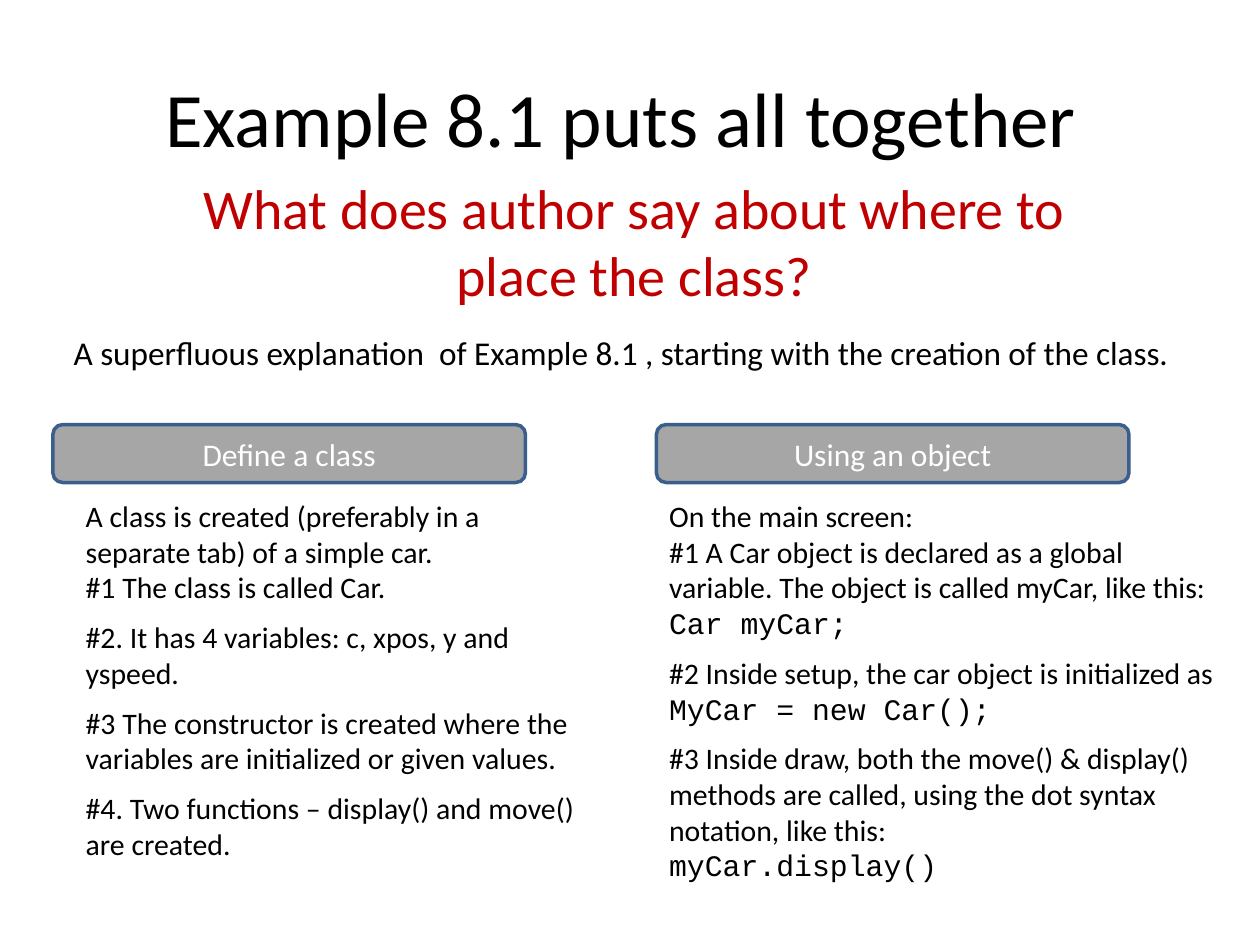
from dataclasses import dataclass

from lxml.etree import SubElement
from pptx import Presentation
from pptx.dml.color import RGBColor
from pptx.enum.shapes import MSO_SHAPE
from pptx.enum.text import MSO_ANCHOR, MSO_AUTO_SIZE, PP_ALIGN
from pptx.oxml.ns import qn
from pptx.slide import Slide
from pptx.util import Inches, Pt


@dataclass(frozen=True)
class Theme:
    font: str = "Calibri"
    mono: str = "Courier New"
    black: RGBColor = RGBColor(0, 0, 0)
    white: RGBColor = RGBColor(255, 255, 255)
    red: RGBColor = RGBColor(0xC0, 0, 0)
    gray: RGBColor = RGBColor(0xA6, 0xA6, 0xA6)
    edge: RGBColor = RGBColor(0x3A, 0x5F, 0x8C)
    title: int = 44
    ask: int = 32
    intro: int = 19
    head: int = 18
    body: int = 17
    gap: int = 8


@dataclass(frozen=True)
class Box:
    left: float
    top: float
    width: float
    height: float

    def lengths(self) -> tuple:
        return tuple(map(Inches, (self.left, self.top, self.width, self.height)))


@dataclass(frozen=True)
class Step:
    text: str
    code: str = ""


@dataclass(frozen=True)
class Column:
    head: str
    bar: Box
    area: Box
    steps: tuple[Step, ...]


THEME = Theme()

COLUMNS = (
    Column("Define a class", Box(0.42, 3.37, 3.75, 0.46), Box(0.58, 3.9, 4.08, 3.01), (
        Step("A class is created (preferably in a separate tab) of a simple car."),
        Step("#1 The class is called Car."),
        Step("#2. It has 4 variables: c, xpos, y and yspeed."),
        Step("#3 The constructor is created where the variables are initialized or given values."),
        Step("#4. Two functions – display() and move() are created."),
    )),
    Column("Using an object", Box(5.21, 3.37, 3.75, 0.46), Box(5.21, 3.9, 4.54, 3.19), (
        Step("On the main screen:"),
        Step("#1 A Car object is declared as a global variable. "
             "The object is called myCar, like this: ", "Car myCar;"),
        Step("#2 Inside setup, the car object is initialized as ", "MyCar = new Car();"),
        Step("#3 Inside draw, both the move() & display() methods are called, "
             "using the dot syntax notation, like this:\v", "myCar.display()"),
    )),
)


def style(run, size: int, color: RGBColor, face: str = THEME.font) -> None:
    run.font.name = face
    run.font.size = Pt(size)
    run.font.color.rgb = color


def write(frame, text: str, size: int, color: RGBColor) -> None:
    """Fill a frame with one centred paragraph."""
    frame.text = text
    frame.word_wrap = True
    para = frame.paragraphs[0]
    para.alignment = PP_ALIGN.CENTER
    for run in para.runs:
        style(run, size, color)


def place(shape, box: Box) -> None:
    shape.left, shape.top, shape.width, shape.height = box.lengths()


def add_label(slide: Slide, box: Box, text: str, size: int, color: RGBColor) -> None:
    label = slide.shapes.add_textbox(*box.lengths())
    write(label.text_frame, text, size, color)


def add_bar(slide: Slide, box: Box, text: str) -> None:
    bar = slide.shapes.add_shape(MSO_SHAPE.ROUNDED_RECTANGLE, *box.lengths())
    bar.shadow.inherit = False
    bar.fill.solid()
    bar.fill.fore_color.rgb = THEME.gray
    bar.line.color.rgb = THEME.edge
    bar.line.width = Pt(2)
    bar.text_frame.vertical_anchor = MSO_ANCHOR.MIDDLE
    write(bar.text_frame, text, THEME.head, THEME.white)


def add_step(para, step: Step, after: int) -> None:
    para.text = step.text
    para.space_before = Pt(0)
    para.space_after = Pt(after)
    for run in para.runs:
        style(run, THEME.body, THEME.black)
    if step.code:
        code = para.add_run()
        code.text = step.code
        style(code, THEME.body, THEME.black, THEME.mono)
    # Line breaks take the body size; the bullet and its indent go
    for brk in para._p.findall(qn("a:br")):
        SubElement(brk, qn("a:rPr"), sz=str(THEME.body * 100))
    props = para._p.get_or_add_pPr()
    props.set("marL", "0")
    props.set("indent", "0")
    SubElement(props, qn("a:buNone"))


def fill_list(holder, column: Column) -> None:
    place(holder, column.area)
    frame = holder.text_frame
    frame.word_wrap = True
    frame.auto_size = MSO_AUTO_SIZE.SHAPE_TO_FIT_TEXT
    for i, step in enumerate(column.steps):
        para = frame.add_paragraph() if i else frame.paragraphs[0]
        add_step(para, step, THEME.gap if i else 0)


def main() -> None:
    deck = Presentation()
    deck.slide_width, deck.slide_height = Inches(10), Inches(7.5)
    slide = deck.slides.add_slide(deck.slide_layouts.get_by_name("Two Content"))

    # Title, question and introduction
    title = slide.shapes.title
    place(title, Box(0.5, 0.3, 9, 1.25))
    write(title.text_frame, "Example 8.1 puts all together ", THEME.title, THEME.black)
    add_label(slide, Box(1.12, 1.33, 7.83, 1.18),
              "What does author say about where to place the class?",
              THEME.ask, THEME.red)
    add_label(slide, Box(0.42, 2.59, 9.08, 0.42),
              "A superfluous explanation  of Example 8.1 , "
              "starting with the creation of the class. ",
              THEME.intro, THEME.black)

    # Two headed columns
    for idx, column in enumerate(COLUMNS, start=1):
        add_bar(slide, column.bar, column.head)
        fill_list(slide.placeholders[idx], column)

    deck.save("out.pptx")


if __name__ == "__main__":
    main()
